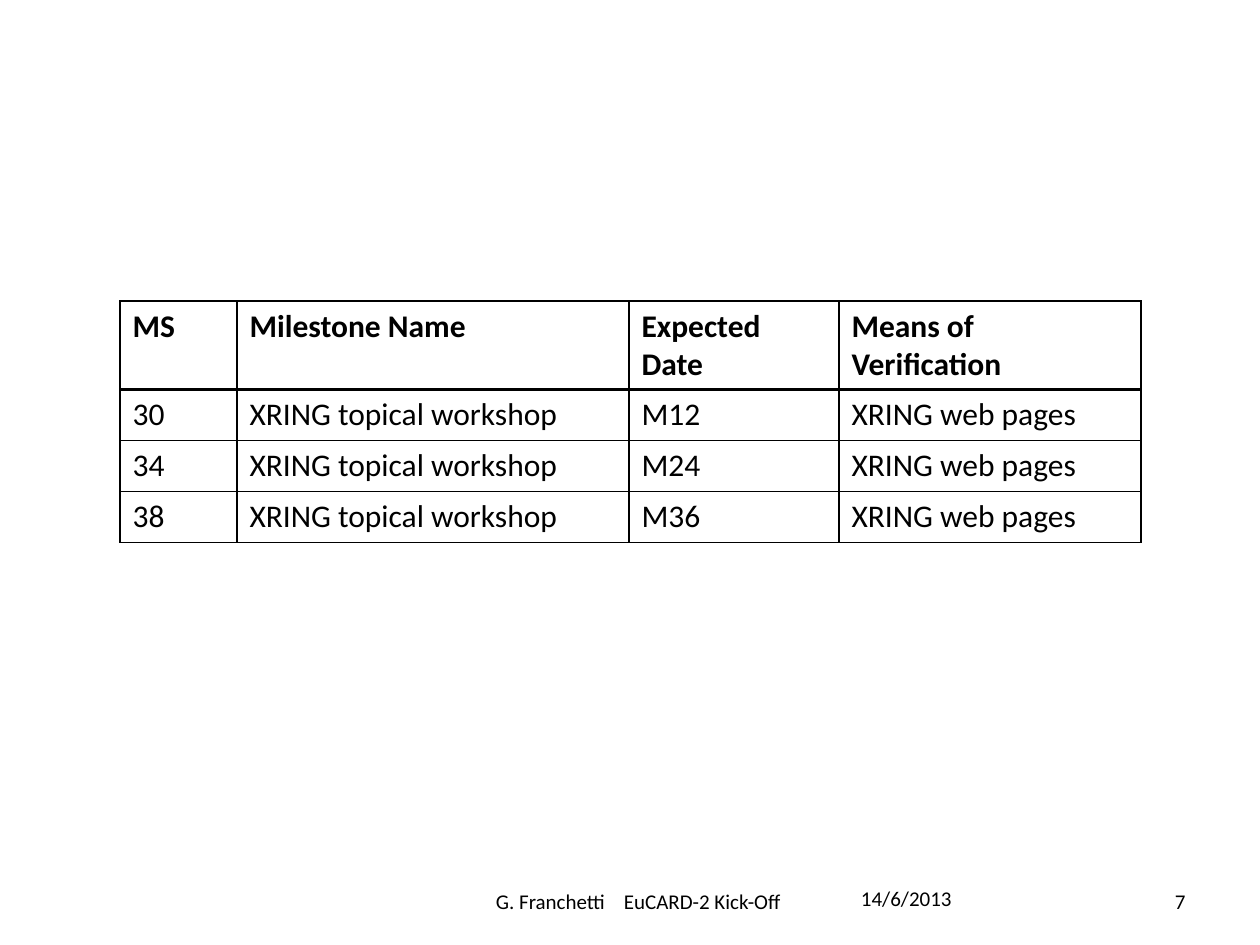
from lxml.etree import SubElement
from pptx import Presentation
from pptx.dml.color import RGBColor
from pptx.enum.text import MSO_ANCHOR, PP_ALIGN
from pptx.oxml import parse_xml
from pptx.oxml.ns import nsdecls, qn
from pptx.util import Emu, Pt

EMU_PER_PX = 914400 / 126
FONT = "Calibri"
BLACK = "000000"
COLUMN_WIDTHS = (117, 392, 210, 302)
HEADER = ("MS", "Milestone Name", "Expected Date", "Means of Verification")
MILESTONES = (("30", "M12"), ("34", "M24"), ("38", "M36"))


def px(length):
    """Turn whole pixels into EMU."""
    return Emu(round(length * EMU_PER_PX))


def color(hex_value):
    """Turn a hex string into a colour."""
    return RGBColor.from_string(hex_value)


def add_run(paragraph, text, size, bold=False):
    """Add one formatted run to a paragraph."""
    run = paragraph.add_run()
    run.text = text
    run.font.name = FONT
    run.font.size = Pt(size)
    run.font.bold = bold
    run.font.color.rgb = color(BLACK)


def add_footer(slide, left, top, width, texts, align, inset=13, tab=None):
    """Add a footer text box, with an optional tab stop."""
    frame = slide.shapes.add_textbox(px(left), px(top), px(width), px(50)).text_frame
    frame.word_wrap = True
    frame.vertical_anchor = MSO_ANCHOR.MIDDLE
    frame.margin_left = px(inset)
    paragraph = frame.paragraphs[0]
    paragraph.alignment = align
    if tab:
        stops = SubElement(paragraph._p.get_or_add_pPr(), qn("a:tabLst"))
        SubElement(stops, qn("a:tab"), pos=str(px(tab)), algn="l")
    for text in texts:
        add_run(paragraph, text, 12)


def set_borders(cell, top, bottom):
    """Draw black borders around a cell, with widths in points."""
    widths = {"lnL": 1, "lnR": 1, "lnT": top, "lnB": bottom}
    properties = cell._tc.get_or_add_tcPr()
    for index, (side, width) in enumerate(widths.items()):
        border = parse_xml(
            f'<a:{side} {nsdecls("a")} w="{Pt(width)}"><a:solidFill>'
            f'<a:srgbClr val="{BLACK}"/></a:solidFill></a:{side}>'
        )
        properties.insert(index, border)


def add_milestone_table(slide):
    """Add the milestone table under a heavier header rule."""
    rows = [HEADER] + [
        (number, "XRING topical workshop", month, "XRING web pages")
        for number, month in MILESTONES
    ]
    heights = [88] + [51] * len(MILESTONES)
    table = slide.shapes.add_table(
        len(rows), len(HEADER), px(120), px(301), px(sum(COLUMN_WIDTHS)), px(sum(heights))
    ).table
    table.horz_banding = False
    for column, width in zip(table.columns, COLUMN_WIDTHS):
        column.width = px(width)
    for row_index, (texts, height) in enumerate(zip(rows, heights)):
        table.rows[row_index].height = px(height)
        for column_index, text in enumerate(texts):
            cell = table.cell(row_index, column_index)
            cell.fill.background()
            set_borders(cell, 2 if row_index == 1 else 1, 2 if row_index == 0 else 1)
            add_run(cell.text_frame.paragraphs[0], text, 18, row_index == 0)


def main():
    """Build and save the milestones slide."""
    presentation = Presentation()
    presentation.slide_width = px(1260)
    presentation.slide_height = px(945)
    slide = presentation.slides.add_slide(presentation.slide_layouts[6])
    add_footer(slide, 848, 873, 152, ["14/6/2013"], PP_ALIGN.LEFT)
    event = ["G. Franchetti", "\t", "EuCARD-2 Kick-Off"]
    add_footer(slide, 430, 876, 418, event, PP_ALIGN.LEFT, inset=66, tab=128)
    add_footer(slide, 1096, 876, 102, ["7"], PP_ALIGN.RIGHT)
    add_milestone_table(slide)
    presentation.save("out.pptx")


if __name__ == "__main__":
    main()
